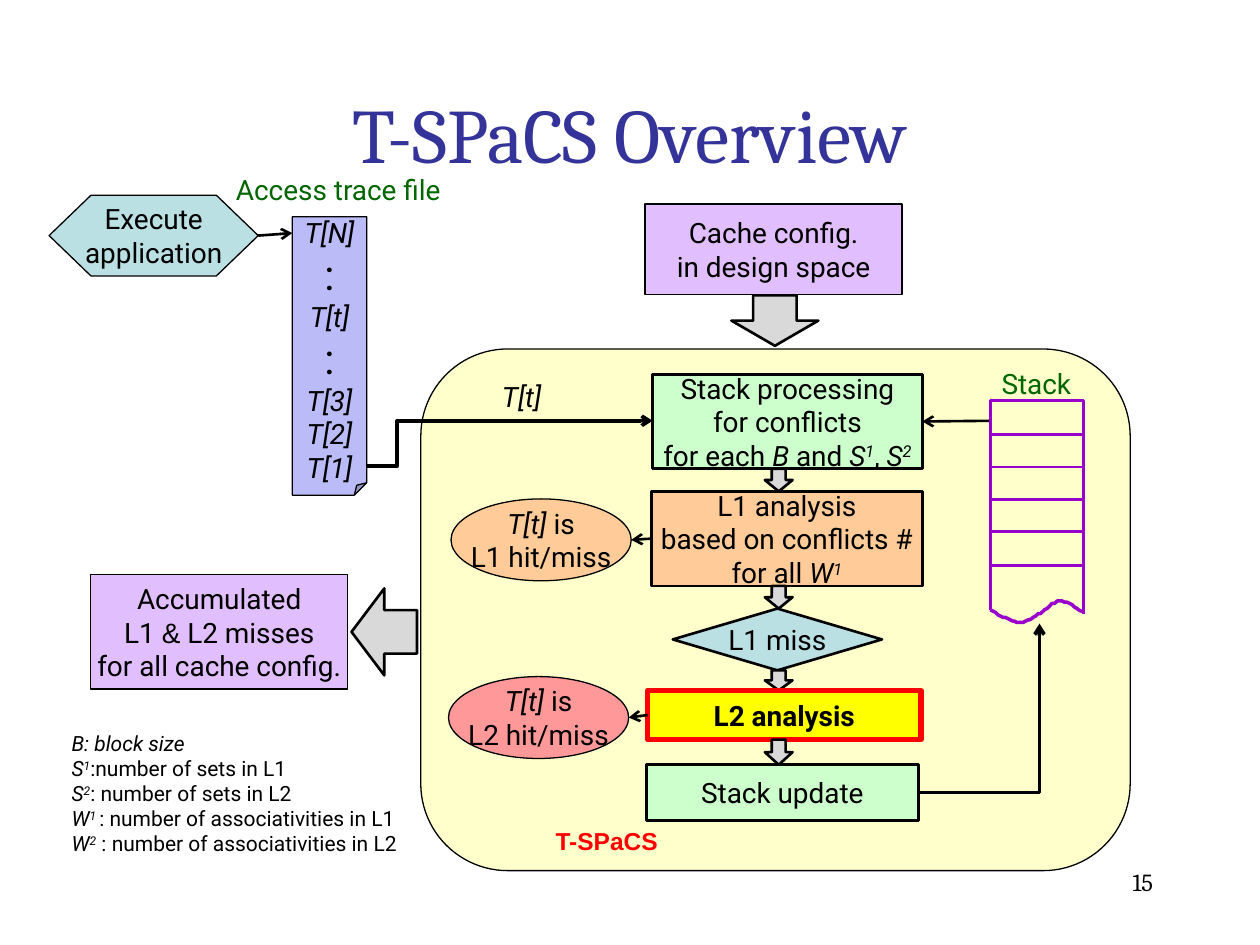
from lxml import etree
from pptx import Presentation
from pptx.dml.color import RGBColor
from pptx.enum.shapes import MSO_CONNECTOR, MSO_SHAPE
from pptx.enum.text import MSO_ANCHOR, MSO_AUTO_SIZE, PP_ALIGN
from pptx.oxml.ns import qn
from pptx.util import Inches, Pt

CELL = Inches(0.01)
COLS, ROWS = 1000, 750
LINE, ELBOW = MSO_CONNECTOR.STRAIGHT, MSO_CONNECTOR.ELBOW
RECT, OVAL = MSO_SHAPE.RECTANGLE, MSO_SHAPE.OVAL
ROUND, FOLD = MSO_SHAPE.ROUNDED_RECTANGLE, MSO_SHAPE.FOLDED_CORNER
HEX, DIAMOND = MSO_SHAPE.FLOWCHART_PREPARATION, MSO_SHAPE.FLOWCHART_DECISION
ARROW = MSO_SHAPE.RIGHT_ARROW
MID, TOP = MSO_ANCHOR.MIDDLE, MSO_ANCHOR.TOP
LEFT, CENTER, RIGHT = PP_ALIGN.LEFT, PP_ALIGN.CENTER, PP_ALIGN.RIGHT
GROW = MSO_AUTO_SIZE.SHAPE_TO_FIT_TEXT
BLACK, GREEN, PURPLE = "000000", "006600", "9900CC"
CREAM, MINT, PEACH, TEAL, LILAC = "FFFFCC", "CCFFCC", "FFCC99", "BBE0E3", "E1BEFE"


def tint(target, color):
    """Set a solid hex colour on a fill or a colour format."""
    if hasattr(target, "solid"):
        target.solid()
        target = target.fore_color
    target.rgb = RGBColor.from_string(color)


def grid(*cells):
    """Turn grid cells into lengths."""
    return [round(c * CELL) for c in cells]


def write(frame, lines, size=16, color=BLACK, font="Roboto", bold=None, align=CENTER):
    """Write lines in which _ toggles italic, ^ superscript and ~ Arial."""
    for row, line in enumerate(lines):
        para = frame.paragraphs[0] if row == 0 else frame.add_paragraph()
        para.alignment = align
        para.font.size, para.font.name, para.font.bold = Pt(size), font, bold
        tint(para.font.color, color)
        state, text = set(), ""
        for char in line + "\0":
            if char not in "_^~\0":
                text += char
                continue
            if text:
                run = para.add_run()
                run.text = text
                if "_" in state:
                    run.font.italic = True
                if "^" in state:
                    run.font._element.set("baseline", "30000")
                if "~" in state:
                    run.font.name = "Arial"
            state ^= {char}
            text = ""


def label(shapes, box, lines, anchor=MID, wrap=True, grow=True, **style):
    """Add a plain text box."""
    frame = shapes.add_textbox(*grid(*box)).text_frame
    frame.word_wrap, frame.vertical_anchor = wrap, anchor
    if grow:
        frame.auto_size = GROW
    write(frame, lines, **style)


def paint(shape, fill, line, width):
    """Fill and outline a shape without a shadow."""
    shape.shadow.inherit = False
    tint(shape.fill, fill)
    tint(shape.line.fill, line)
    shape.line.width = Pt(width)


def node(shapes, kind, box, fill, lines=(), width=0.75, line=BLACK, bold=None):
    """Add a filled shape with centred text."""
    shape = shapes.add_shape(kind, *grid(*box))
    paint(shape, fill, line, width)
    frame = shape.text_frame
    frame.word_wrap, frame.vertical_anchor = False, MID
    write(frame, lines, bold=bold)
    return shape


def link(shapes, start, end, width=1.5, color=BLACK, kind=LINE, head=True):
    """Add a connector, with an arrowhead if asked."""
    wire = shapes.add_connector(kind, *grid(*start, *end))
    tint(wire.line.fill, color)
    wire.line.width = Pt(width)
    if head:
        etree.SubElement(wire.line._get_or_add_ln(), qn("a:tailEnd"), type="arrow")
    etree.SubElement(wire._element.spPr, qn("a:effectLst"))
    return wire


def block(shapes, mid, size, turn):
    """Add a grey block arrow of a length and width, turned about its middle."""
    (x, y), (w, h) = mid, size
    shape = node(shapes, ARROW, (x - w / 2, y - h / 2, w, h), "D9D9D9", width=1.5)
    shape.rotation = turn


def heading(slide, box):
    """Place the slide title."""
    title = slide.shapes.title
    title.left, title.top, title.width, title.height = grid(*box)
    title.text_frame.vertical_anchor = MID
    write(title.text_frame, ["T-SPaCS Overview"], 44, "333399", "Cambria")


def trace(shapes, box):
    """Draw the application and its access trace file."""
    x, y, w, h = box
    node(shapes, HEX, (x, y + 23, 166, 64), TEAL, ["Execute", "application"])
    label(shapes, (x + 129, y, 201, 37), ["Access trace file"], color=GREEN)
    link(shapes, (x + 166, y + 55), (x + 193, y + 53))
    lines = ["_T[N]", ":", "_T[t]", ":", "_T[3]", "_T[2]", "_T[1]"]
    file = node(shapes, FOLD, (x + w - 59, y + h - 221, 59, 221), "BBBBF7", lines)
    for para in file.text_frame.paragraphs[1:4:2]:
        para.font.size = Pt(24)


def panel(shapes, box):
    """Draw the rounded frame of the method with its name."""
    x, y, w, h = box
    node(shapes, ROUND, box, CREAM)
    label(shapes, (x + 60, y + h - 41, 175, 34), ["T-SPaCS"],
          size=14, color="FF0000", font="Arial", bold=True)


def curve(start, turns, steps=12):
    """List points along a chain of cubic curves."""
    points = [start]
    for a, b, end in turns:
        for t in (n / steps for n in range(1, steps + 1)):
            u = 1 - t
            points.append(tuple(
                u**3 * p + 3 * u * u * t * q + 3 * u * t * t * r + t**3 * s
                for p, q, r, s in zip(start, a, b, end)))
        start = end
    return points


def stack(shapes, box):
    """Draw the stack with its torn lower end."""
    x, y, w, h = box
    parts = shapes.add_group_shape().shapes
    node(parts, RECT, (x, y, w, 131), CREAM, width=2, line=PURPLE)
    for row in range(4):
        level = y + 27 + row * 25.67
        link(parts, (x, level), (x + w, level), color=PURPLE, head=False)
    for side, foot in ((x, h - 10), (x + w, h - 7)):
        link(parts, (side, y + 129), (side, y + foot), 2, PURPLE, head=False)
    turns = [((8, 5), (16, 9), (23, 10)), ((30, 10), (36, 4), (41, 2)),
             ((46, -1), (50, -7), (56, -7)), ((61, -7), (w, 2), (w, 2))]
    points = [(x + a, y + h - 10 + b) for a, b in curve((0, 0), turns)]
    pen = parts.build_freeform(*points[0], scale=CELL)
    pen.add_line_segments(points[1:], close=False)
    paint(pen.convert_to_shape(), CREAM, PURPLE, 2)
    label(shapes, (x - 19, y - 32, 111, 37), ["Stack"], color=GREEN)


def flow(shapes, box):
    """Draw the column of steps with its results and return the first step."""
    x, y, w, h = box
    steps = [
        (RECT, 5, 0, 214, 75, MINT,
         ["Stack processing", "for conflicts", "for each _B_ and _S^1^_, _S^2"]),
        (RECT, 4, 93, 215, 75, PEACH,
         ["L1 analysis", "based on conflicts #", "for all _W^1"]),
        (DIAMOND, 21, 186, 166, 49, TEAL, ["L1 miss"]),
        (RECT, 1, 251, 217, 39, "FFFF00", ["L2 analysis"]),
        (RECT, 0, 310, w, h - 310, MINT, ["Stack update"])]
    made, base = [], 0
    for kind, left, top, wide, high, fill, lines in steps:
        if made:
            block(shapes, (x + 105, y + (base + top) / 2), (top - base, 22), 90)
        main = lines == ["L2 analysis"]
        made.append(node(shapes, kind, (x + left, y + top, wide, high), fill, lines,
                         3 if main else 1.5, "FF0000" if main else BLACK, main))
        base = top + high
    for step, name, left, top, fill in ((1, "L1", -155, 99, PEACH),
                                        (3, "L2", -157, 240, "FF9999")):
        node(shapes, OVAL, (x + left, y + top, 143, 65), fill,
             ["_T[t]_ is", name + " hit/miss"])
        tip = (x + left + 143, y + top + 32.5)
        link(shapes, tip, tip).begin_connect(made[step], 1)
    return made[0]


def wires(shapes, first):
    """Join the trace, the steps and the stack."""
    link(shapes, (785, 334), (732, 334)).end_connect(first, 3)
    feed = link(shapes, (291, 370), (518, 334), 2, kind=ELBOW)
    etree.SubElement(feed._element.spPr.prstGeom[0], qn("a:gd"),
                     name="adj1", fmla="val 10600")
    back = link(shapes, (730, 629), (825, 495), 2, kind=ELBOW)
    back._element.spPr.prstGeom.set("prst", "bentConnector2")
    label(shapes, (377, 296, 74, 37), ["_T[t]"])


def ends(shapes, source, result):
    """Draw what goes into the method and what comes out."""
    x, y, w, h = source
    node(shapes, RECT, source, LILAC, ["Cache config.", "in design space"])
    block(shapes, (x + w / 2 + 1, y + h + 20.5), (40, 69), 90)
    x, y, w, h = result
    node(shapes, RECT, result, LILAC,
         ["Accumulated", "L1 ~&~ L2 misses", "for all cache config."])
    block(shapes, (x + w + 29, y + h / 2), (52, 69), 180)


def legend(shapes, box):
    """Explain the symbols."""
    label(shapes, box, [
        "_B: block size", "_S^1^_:number of sets in L1",
        "_S^2^_: number of sets in L2",
        "_W^1 ^_: number of associativities in L1",
        "_W^2^_ : number of associativities in L2"],
        wrap=False, grow=False, size=12, align=LEFT)


def main():
    """Build and save the slide."""
    deck = Presentation()
    deck.slide_width, deck.slide_height = grid(COLS, ROWS)
    slide = deck.slides.add_slide(deck.slide_layouts[5])
    shapes = slide.shapes
    heading(slide, (75, 43, 850, 125))
    label(shapes, (717, 683, 208, 50), ["15"], anchor=TOP, grow=False,
          size=14, font="Cambria", align=RIGHT)
    trace(shapes, (39, 132, 252, 261))
    panel(shapes, (334, 277, 563, 414))
    stack(shapes, (786, 318, 74, 176))
    wires(shapes, flow(shapes, (513, 297, 216, 354)))
    ends(shapes, (512, 162, 204, 72), (72, 456, 204, 91))
    legend(shapes, (47, 585, 283, 89))
    deck.save("out.pptx")


if __name__ == "__main__":
    main()
